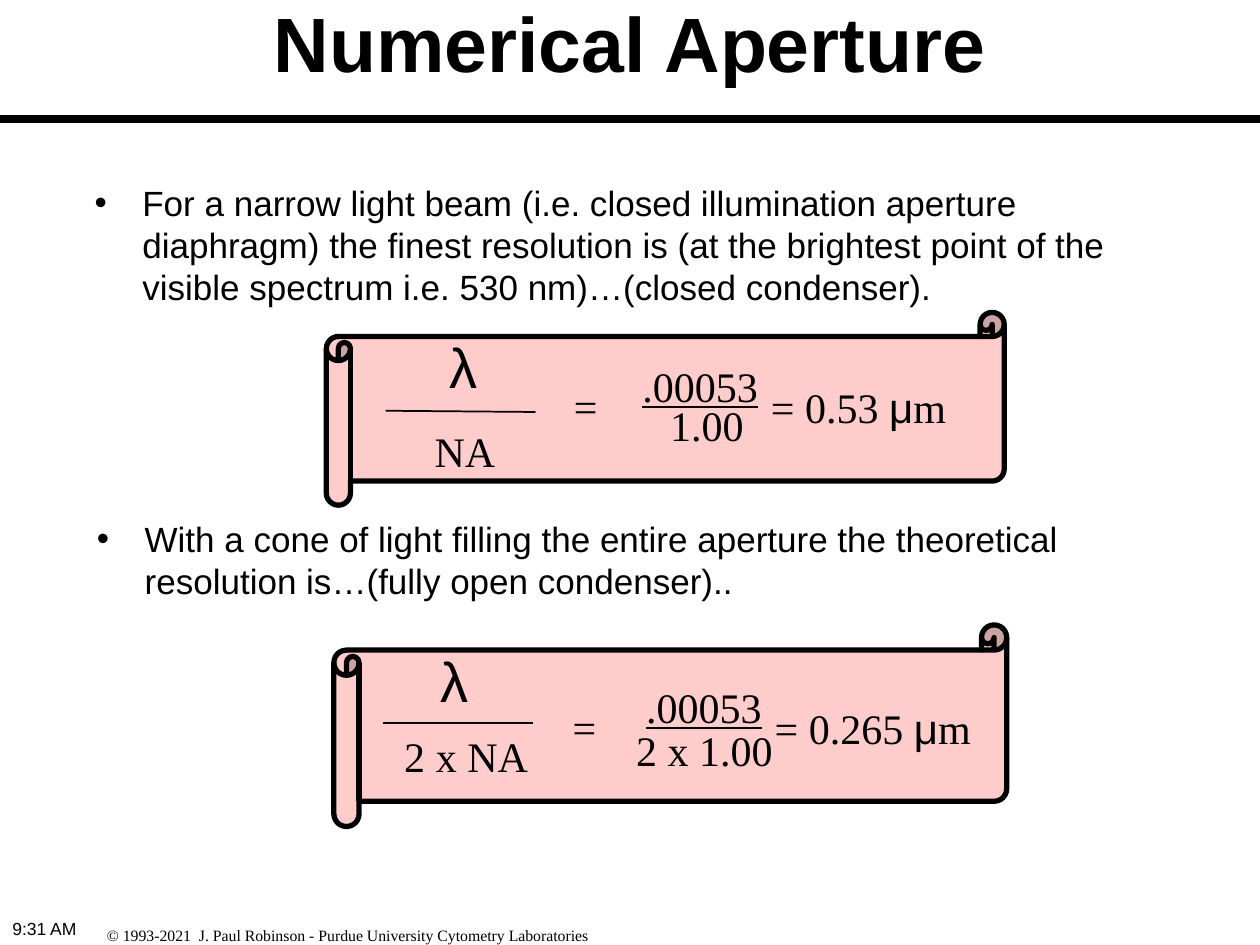
from lxml import etree
from pptx import Presentation
from pptx import util as u
from pptx.dml.color import RGBColor
from pptx.enum import shapes as sh, text as tx
from pptx.oxml.ns import qn

ARIAL, TIMES = "Arial", "Times New Roman"
MID = tx.MSO_ANCHOR.MIDDLE
CENTER = tx.PP_ALIGN.CENTER


def color(code):
    return RGBColor.from_string(code)


def place(shape, box):
    shape.left, shape.top, shape.width, shape.height = map(u.Inches, box)


def write(frame, runs, size=24, font=TIMES, bold=False, italic=False, under=False,
          align=None, anchor=tx.MSO_ANCHOR.TOP, wrap=False, bullet=False):
    frame.auto_size = tx.MSO_AUTO_SIZE.NONE
    frame.word_wrap = wrap
    frame.vertical_anchor = anchor
    frame.margin_left = frame.margin_right = u.Inches(0.1)
    frame.margin_top = frame.margin_bottom = u.Inches(0.05)
    para = frame.paragraphs[0]
    para.alignment = align
    para.space_before = u.Pt(0)
    if bullet:
        props = para._p.get_or_add_pPr()
        props.set("marL", str(u.Inches(0.38)))
        props.set("indent", str(u.Inches(-0.38)))
        etree.SubElement(props, qn("a:buFont")).set("typeface", ARIAL)
        etree.SubElement(props, qn("a:buChar")).set("char", "•")
    for part in [runs] if isinstance(runs, str) else runs:
        words, face = (part, font) if isinstance(part, str) else part
        run = para.add_run()
        run.text = words
        style = run.font
        style.size, style.name = u.Pt(size), face
        style.bold, style.italic, style.underline = bold, italic, under
        style.color.rgb = color("000000")


def label(slide, box, runs, **form):
    shape = slide.shapes.add_textbox(*map(u.Inches, box))
    write(shape.text_frame, runs, **form)


def block(slide, kind, box, fill, width):
    shape = slide.shapes.add_shape(kind, *map(u.Inches, box))
    shape.shadow.inherit = False
    shape.fill.solid()
    shape.fill.fore_color.rgb = color(fill)
    shape.line.color.rgb = color("000000")
    shape.line.width = u.Pt(width)


def bar(slide, start, end):
    line = slide.shapes.add_connector(
        sh.MSO_CONNECTOR.STRAIGHT, *map(u.Inches, start + end))
    line.line.color.rgb = color("000000")
    line.line.width = u.Pt(1)
    etree.SubElement(line._element.spPr, qn("a:effectLst"))


def header(slide, box):
    left, top, width, height = box
    title = slide.shapes.title
    place(title, (left + 0.75, top - 0.29, width - 1.5, 1.25))
    write(title.text_frame, "Numerical Aperture", size=44, font=ARIAL, bold=True,
          align=CENTER, anchor=MID, wrap=True)
    block(slide, sh.MSO_SHAPE.RECTANGLE, (left, top + height, width, 0.05), "000000", 1)


def scroll(slide, box, lam, rule, base, equal, top, low, result):
    left, head = box[:2]

    def at(spot, width, height=0.5):
        return left + spot[0], head + spot[1], width, height

    block(slide, sh.MSO_SHAPE.HORIZONTAL_SCROLL, box, "FFCCCC", 3)
    label(slide, at(lam, 0.44, 0.63), "λ", size=32, font=ARIAL)
    x, y, drop = rule
    bar(slide, (left + x, head + y), (left + x + 1.19, head + y + drop))
    label(slide, at(base[0], base[1]), base[2])
    label(slide, at(equal, 0.43), "=", italic=True, align=CENTER, anchor=MID)
    label(slide, at(top, 1.11), ".00053", under=True)
    label(slide, at(low[0], low[1]), low[2])
    label(slide, at(result[0], result[1]), [result[2], ("μ", ARIAL), "m"])


def points(slide, box):
    left, top, width = box
    form = dict(size=20, font=ARIAL, wrap=True, bullet=True)
    body = slide.placeholders[1]
    place(body, (left, top, width, 0.91))
    write(body.text_frame, "For a narrow light beam (i.e. closed illumination aperture "
          "diaphragm) the finest resolution is (at the brightest point of the visible "
          "spectrum i.e. 530 nm)…(closed condenser).", **form)
    label(slide, (left + 0.02, top + 2.67, width, 0.78),
          "With a cone of light filling the entire aperture the theoretical "
          "resolution is…(fully open condenser)..", **form)


def footer(slide, box):
    left, top = box
    label(slide, (left, top, 2.33, 0.52), "9:31 AM", size=10, font=ARIAL, wrap=True)
    label(slide, (left + 0.75, top + 0.06, 5.54, 0.25),
          "© 1993-2021  J. Paul Robinson - Purdue University Cytometry Laboratories",
          size=9, wrap=True)


def main():
    deck = Presentation()
    deck.slide_width, deck.slide_height = u.Inches(10), u.Inches(7.5)
    slide = deck.slides.add_slide(deck.slide_layouts[1])
    header(slide, (0, 0, 10, 0.92))
    points(slide, (0.65, 1.39, 8.5))
    scroll(slide, (2.59, 2.48, 5.38, 1.53), lam=(0.88, 0.11), rule=(0.47, 0.78, 0.01),
           base=((0.76, 0.85), 0.68, "NA"), equal=(1.84, 0.49), top=(2.41, 0.33),
           low=((2.63, 0.64), 0.78, "1.00"), result=((3.43, 0.5), 1.59, "= 0.53 "))
    scroll(slide, (2.65, 4.96, 5.34, 1.6), lam=(0.75, 0.12), rule=(0.39, 0.78, 0),
           base=((0.46, 0.79), 1.18, "2 x NA"), equal=(1.77, 0.56), top=(2.38, 0.4),
           low=((2.3, 0.74), 1.28, "2 x 1.00"), result=((3.4, 0.57), 1.75, "= 0.265 "))
    footer(slide, (0, 7.24))
    deck.save("out.pptx")


if __name__ == "__main__":
    main()
